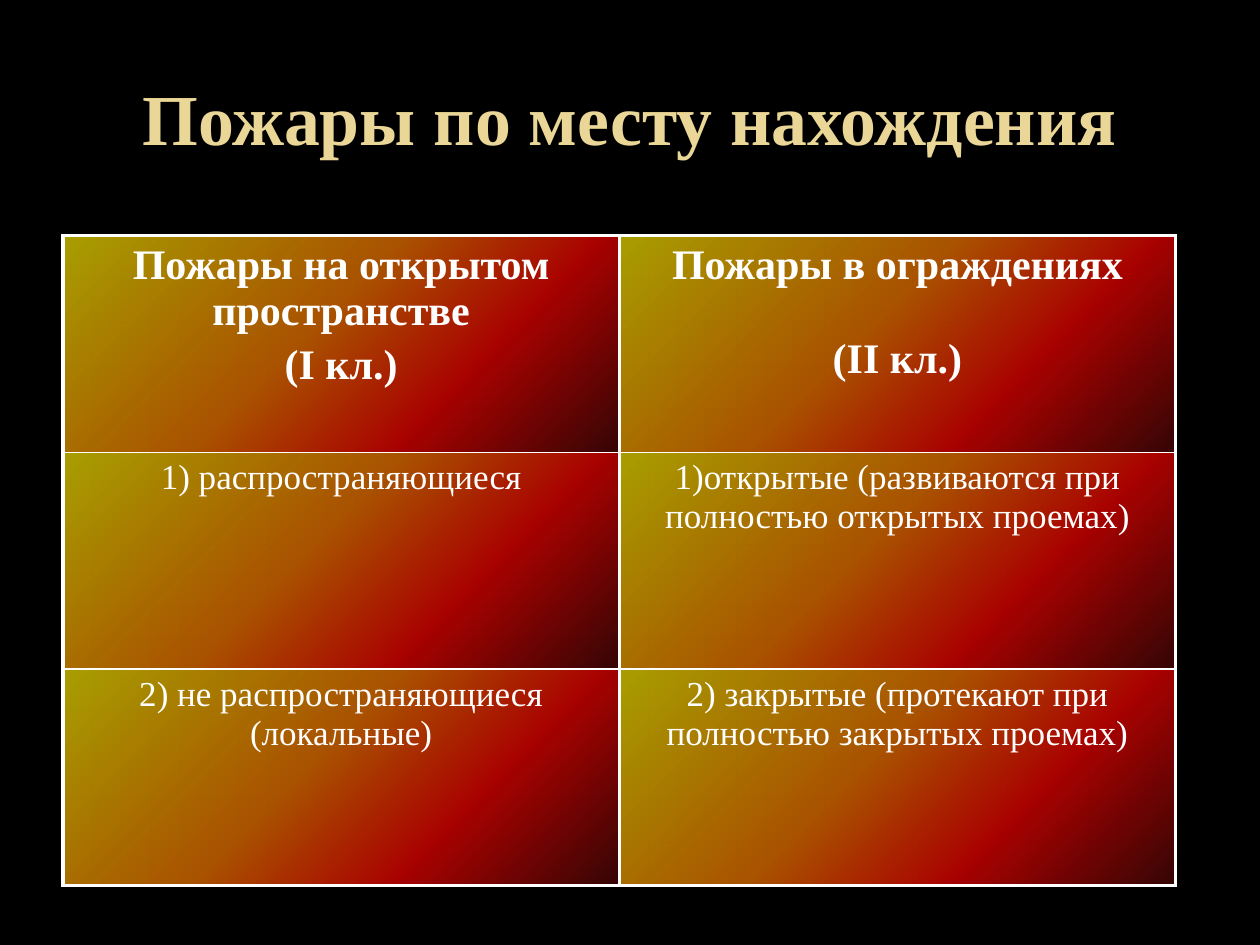
from lxml import etree
from pptx import Presentation
from pptx.dml.color import RGBColor
from pptx.enum.text import MSO_ANCHOR, PP_ALIGN
from pptx.oxml.ns import qn
from pptx.util import Pt

CENTER = PP_ALIGN.CENTER
MIDDLE = MSO_ANCHOR.MIDDLE

# Content
TITLE = "Пожары по месту нахождения"
ROWS = [
    (["Пожары на открытом пространстве", "(I кл.)"],
     ["Пожары в ограждениях", "(II кл.)"]),
    (["1) распространяющиеся"],
     ["1)открытые (развиваются при полностью открытых проемах)"]),
    (["2) не распространяющиеся (локальные)"],
     ["2) закрытые (протекают при полностью закрытых проемах)"]),
]
CLASS_GAPS = [4, 27.3]  # space above the class line, by column

THEME = {
    "font": "Times New Roman",
    "background": "000000", "title": "EAD696", "text": "FFFFFF", "border": "FFFFFF",
    "title_size": 41, "header_size": 24, "body_size": 20,
    "thick": 2.25, "thin": 1,
    # position %, colour, opacity %
    "fire": [(0, "FFF200", 65), (45, "FF7A00", 66), (70, "FF0300", 66), (100, "4D0808", 67)],
    "fire_angle": 45,
}
TABLE_LEFT, TABLE_TOP = 36, 134.64
COLUMN_WIDTH, ROW_HEIGHT = 317.88, 123.84


def style(paragraph, size, color, bold):
    paragraph.alignment = CENTER
    font = paragraph.font
    font.name, font.size, font.bold = THEME["font"], Pt(size), bold
    font.color.rgb = RGBColor.from_string(color)


def add_border(properties, side, width):
    line = etree.SubElement(properties, qn(f"a:ln{side}"), w=str(Pt(width)))
    fill = etree.SubElement(line, qn("a:solidFill"))
    etree.SubElement(fill, qn("a:srgbClr"), val=THEME["border"])


def add_fire_fill(properties):
    gradient = etree.SubElement(properties, qn("a:gradFill"), rotWithShape="1")
    stops = etree.SubElement(gradient, qn("a:gsLst"))
    for position, color, opacity in THEME["fire"]:
        stop = etree.SubElement(stops, qn("a:gs"), pos=str(position * 1000))
        color_element = etree.SubElement(stop, qn("a:srgbClr"), val=color)
        etree.SubElement(color_element, qn("a:alpha"), val=str(opacity * 1000))
    etree.SubElement(gradient, qn("a:lin"), ang=str(THEME["fire_angle"] * 60000), scaled="0")


def fill_cell(cell, lines, row, column):
    is_header = row == 0
    text_frame = cell.text_frame
    text_frame.text = "\n".join(lines)
    size = THEME["header_size"] if is_header else THEME["body_size"]
    for paragraph in text_frame.paragraphs:
        style(paragraph, size, THEME["text"], is_header)
    for paragraph in text_frame.paragraphs[1:]:
        paragraph.space_before = Pt(CLASS_GAPS[column])

    # Thin lines between rows, thick lines elsewhere
    properties = cell._tc.get_or_add_tcPr()
    top = THEME["thick"] if is_header else THEME["thin"]
    bottom = THEME["thick"] if row == len(ROWS) - 1 else THEME["thin"]
    for side, width in (("L", THEME["thick"]), ("R", THEME["thick"]), ("T", top), ("B", bottom)):
        add_border(properties, side, width)
    add_fire_fill(properties)


def main():
    presentation = Presentation()
    presentation.slide_width, presentation.slide_height = Pt(720), Pt(540)
    slide = presentation.slides.add_slide(presentation.slide_layouts[6])
    background = slide.background.fill
    background.solid()
    background.fore_color.rgb = RGBColor.from_string(THEME["background"])

    # Title
    title = slide.shapes.add_textbox(Pt(36), Pt(21.6), Pt(648), Pt(90))
    text_frame = title.text_frame
    text_frame.word_wrap = True
    text_frame.vertical_anchor = MIDDLE
    text_frame.text = TITLE
    style(text_frame.paragraphs[0], THEME["title_size"], THEME["title"], True)

    # Table of fire classes
    column_count = len(ROWS[0])
    table = slide.shapes.add_table(
        len(ROWS), column_count, Pt(TABLE_LEFT), Pt(TABLE_TOP),
        Pt(COLUMN_WIDTH * column_count), Pt(ROW_HEIGHT * len(ROWS))).table
    table.horz_banding = False
    for row, cells in enumerate(ROWS):
        for column, lines in enumerate(cells):
            fill_cell(table.cell(row, column), lines, row, column)

    presentation.save("out.pptx")


if __name__ == "__main__":
    main()
